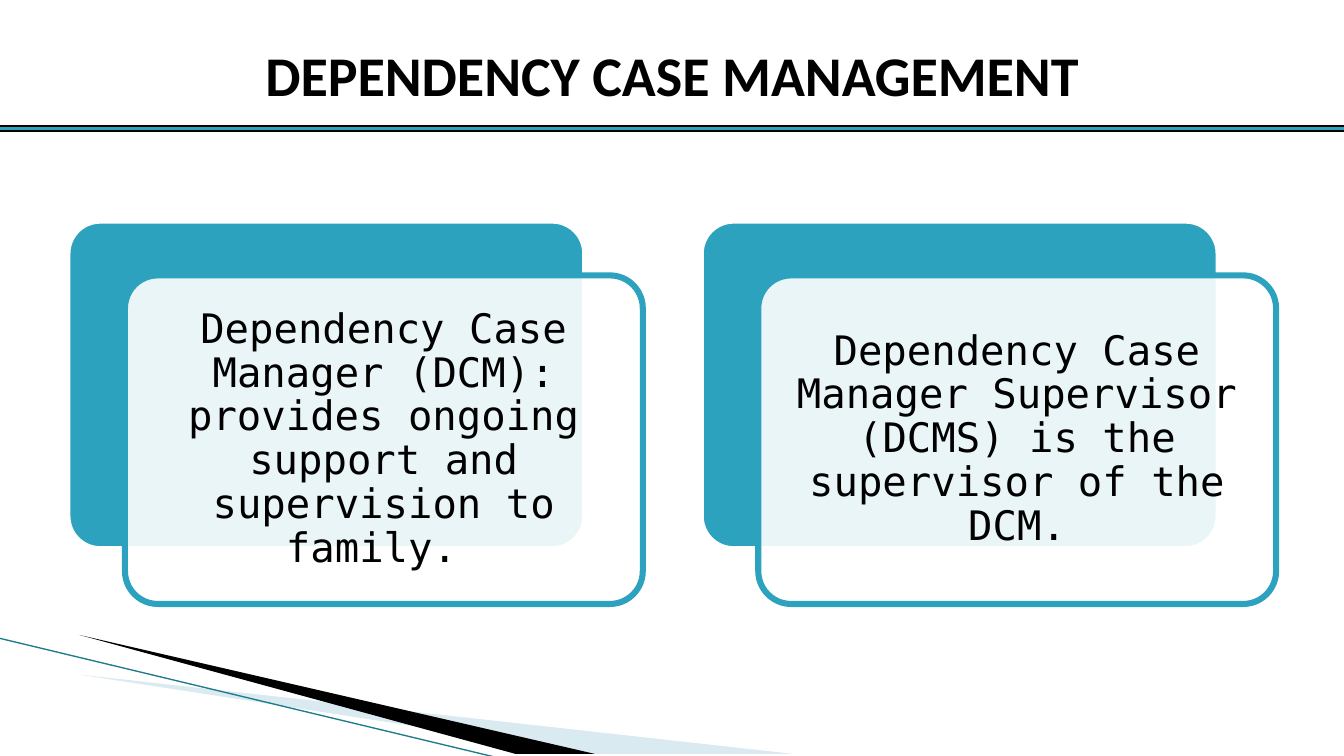
from lxml import etree
from pptx import Presentation
from pptx.dml.color import RGBColor
from pptx.enum.shapes import MSO_CONNECTOR, MSO_SHAPE
from pptx.enum.text import MSO_ANCHOR, PP_ALIGN
from pptx.oxml.ns import qn
from pptx.util import Cm, Pt

TEAL = "2DA2BF"
BLACK = "000000"
WHITE = "FFFFFF"
SLIDE_WIDTH = 33.87
SLIDE_HEIGHT = 19.05

ROLES = [
    "Dependency Case Manager (DCM): provides ongoing support and supervision to family. ",
    "Dependency Case Manager Supervisor (DCMS) is the supervisor of the DCM.",
]


def color(value):
    return RGBColor.from_string(value)


def paint(shape, fill, opacity=100, line=None, line_width=0):
    shape.shadow.inherit = False
    shape.fill.solid()
    shape.fill.fore_color.rgb = color(fill)
    if opacity < 100:
        tint = shape.fill._xPr.find(qn("a:solidFill"))[0]
        etree.SubElement(tint, qn("a:alpha"), val=str(opacity * 1000))
    if line:
        shape.line.color.rgb = color(line)
        shape.line.width = Pt(line_width)
    else:
        shape.line.fill.background()


def add_line(page, start, end, line, width):
    connector = page.shapes.add_connector(
        MSO_CONNECTOR.STRAIGHT, *[Cm(value) for value in start + end])
    connector.line.color.rgb = color(line)
    connector.line.width = Pt(width)
    etree.SubElement(connector._element.spPr, qn("a:effectLst"))


def add_wedge(page, points, fill, opacity=100):
    builder = page.shapes.build_freeform(*points[0], scale=Cm(1))
    builder.add_line_segments(points[1:], close=True)
    paint(builder.convert_to_shape(), fill, opacity)


def write(shape, text, font, size, bold=False, spacing=1.0, inset=0.25):
    frame = shape.text_frame
    frame.word_wrap = True
    frame.vertical_anchor = MSO_ANCHOR.MIDDLE
    frame.margin_left = frame.margin_right = Cm(inset)
    frame.margin_top = frame.margin_bottom = Cm(inset)
    para = frame.paragraphs[0]
    para.alignment = PP_ALIGN.CENTER
    para.line_spacing = spacing
    span = para.add_run()
    span.text = text
    span.font.name = font
    span.font.size = Pt(size)
    span.font.bold = bold
    span.font.color.rgb = color(BLACK)


def add_panel(page, left, top, fill, line, opacity=100):
    panel = page.shapes.add_shape(
        MSO_SHAPE.ROUNDED_RECTANGLE, Cm(left), Cm(top), Cm(13.05), Cm(8.28))
    panel.adjustments[0] = 0.1
    paint(panel, fill, opacity, line, 4.33)
    return panel


def add_role_card(page, left, text):
    top = 5.56
    add_panel(page, left, top, TEAL, WHITE)
    front = add_panel(page, left + 1.45, top + 1.38, WHITE, TEAL, 90)
    write(front, text, "DejaVu Sans Mono", 29, spacing=0.9, inset=0.31)


def add_corner(page):
    add_wedge(page, [(1.85, 16.51), (20.14, 19.08), (15.44, 19.08)], "A0CBDC", 40)
    add_wedge(page, [(1.8, 16.48), (15.47, 19.08), (12.6, 19.1)], BLACK)
    add_line(page, (-0.03, 16.08), (12.57, 19.1), "1F7A8C", 0.95)


def add_title(page, text):
    band = page.shapes.add_shape(
        MSO_SHAPE.RECTANGLE, 0, Cm(3.18), Cm(SLIDE_WIDTH), Cm(0.13))
    paint(band, TEAL)
    for height in (3.3, 3.18):
        add_line(page, (0, height), (SLIDE_WIDTH, height), BLACK, 1.5)
    box = page.shapes.add_textbox(Cm(1.7), Cm(0.76), Cm(30.48), Cm(2.21))
    write(box, text, "Calibri", 40, bold=True)


def main():
    deck = Presentation()
    deck.slide_width = Cm(SLIDE_WIDTH)
    deck.slide_height = Cm(SLIDE_HEIGHT)
    page = deck.slides.add_slide(deck.slide_layouts[6])
    add_corner(page)
    add_title(page, "DEPENDENCY CASE MANAGEMENT")
    for index, role in enumerate(ROLES):
        add_role_card(page, 1.7 + index * 15.96, role)
    deck.save("out.pptx")


if __name__ == "__main__":
    main()
